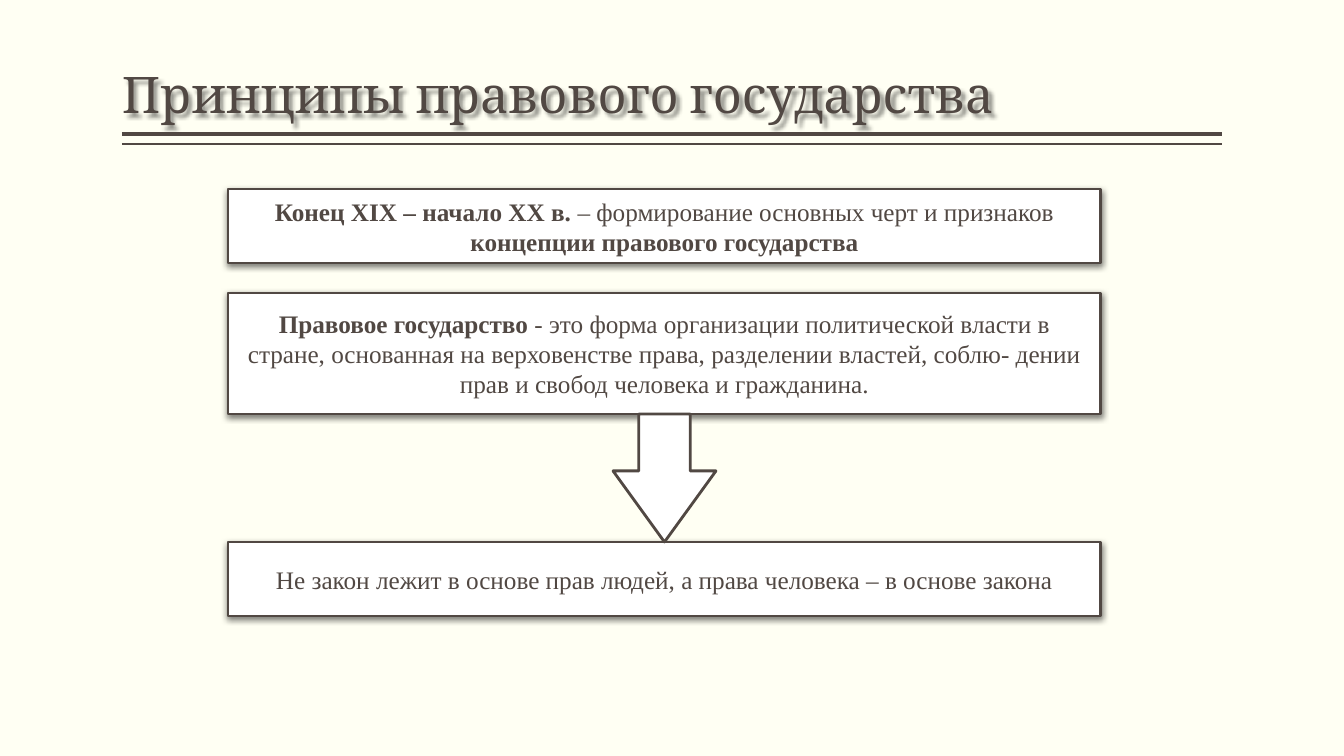
from lxml import etree
from pptx import Presentation
from pptx.dml.color import RGBColor
from pptx.enum.shapes import MSO_CONNECTOR, MSO_SHAPE
from pptx.enum.text import MSO_ANCHOR, MSO_AUTO_SIZE, PP_ALIGN
from pptx.oxml.ns import qn
from pptx.util import Pt

PX = 914400 / 100.8
BROWN = RGBColor(0x51, 0x48, 0x43)
WHITE = RGBColor(0xFF, 0xFF, 0xFF)
CREAM = RGBColor(0xFF, 0xFF, 0xF3)

PERIOD = [
    ("Конец XIX – начало XX в. ", True),
    ("– формирование основных черт и признаков ", False),
    ("концепции правового государства", True),
]
DEFINITION = [
    ("Правовое государство ", True),
    ("- это форма организации политической власти в стране, основанная на "
     "верховенстве права, разделении властей, соблю- дении прав и свобод "
     "человека и гражданина.", False),
]
CONCLUSION = [
    ("Не закон лежит в основе прав людей, а права человека – в основе закона", False),
]


def px(*lengths):
    return [round(n * PX) for n in lengths]


def set_shadow(sp, blur, dist, angle, alpha):
    sp.shadow.inherit = False
    effects = sp._element.spPr.find(qn("a:effectLst"))
    outer = etree.SubElement(effects, qn("a:outerShdw"), blurRad=str(Pt(blur)),
                             dist=str(Pt(dist)), dir=str(angle * 60000),
                             algn="ctr", rotWithShape="0")
    color = etree.SubElement(outer, qn("a:srgbClr"), val="000000")
    etree.SubElement(color, qn("a:alpha"), val=str(alpha * 1000))


def set_font(p, name, size):
    p.font.name = name
    p.font.size = Pt(size)
    p.font.color.rgb = BROWN


def add_title(s, text, x, y, w, h):
    sp = s.shapes.title
    sp.left, sp.top, sp.width, sp.height = px(x, y, w, h)
    set_shadow(sp, 3, 3, 45, 43)
    tf = sp.text_frame
    tf.text = text
    tf.word_wrap = True
    tf.auto_size = MSO_AUTO_SIZE.NONE
    tf.vertical_anchor = MSO_ANCHOR.BOTTOM
    tf.margin_left = tf.margin_right = 0
    p = tf.paragraphs[0]
    p.alignment = PP_ALIGN.LEFT
    p.line_spacing = 0.9
    set_font(p, "Cambria", 36)
    for gap, weight in ((5, 3), (15, 1)):
        rule = s.shapes.add_connector(
            MSO_CONNECTOR.STRAIGHT, *px(x, y + h + gap, x + w, y + h + gap))
        rule.line.color.rgb = BROWN
        rule.line.width = Pt(weight)
        etree.SubElement(rule._element.spPr, qn("a:effectLst"))


def add_outlined(s, kind, x, y, w, h):
    sp = s.shapes.add_shape(kind, *px(x, y, w, h))
    sp.shadow.inherit = False
    sp.fill.solid()
    sp.fill.fore_color.rgb = WHITE
    sp.line.color.rgb = BROWN
    sp.line.width = Pt(2)
    return sp


def add_statement(s, runs, x, y, w, h):
    sp = add_outlined(s, MSO_SHAPE.RECTANGLE, x, y, w, h)
    set_shadow(sp, 4.5, 1.5, 90, 50)
    tf = sp.text_frame
    tf.word_wrap = True
    tf.vertical_anchor = MSO_ANCHOR.MIDDLE
    p = tf.paragraphs[0]
    p.alignment = PP_ALIGN.CENTER
    set_font(p, "Times New Roman", 18)
    for text, bold in runs:
        r = p.add_run()
        r.text = text
        r.font.bold = bold


def add_scheme(s, x, y, w):
    short, tall, gap = 74, 121, 30
    arrow_w, arrow_h = 103, 128
    definition_y = y + short + gap
    arrow_y = definition_y + tall
    add_statement(s, PERIOD, x, y, w, short)
    add_statement(s, DEFINITION, x, definition_y, w, tall)
    add_statement(s, CONCLUSION, x, arrow_y + arrow_h, w, short)
    arrow = add_outlined(s, MSO_SHAPE.DOWN_ARROW,
                         x + (w - arrow_w) / 2, arrow_y, arrow_w, arrow_h)
    arrow.adjustments[0] = 0.5
    arrow.adjustments[1] = 0.69


def main():
    prs = Presentation()
    prs.slide_width, prs.slide_height = px(1344, 756)
    s = prs.slides.add_slide(prs.slide_layouts[5])
    s.background.fill.solid()
    s.background.fill.fore_color.rgb = CREAM
    add_title(s, "Принципы правового государства", 122, 8, 1100, 121)
    add_scheme(s, 228, 189, 873)
    prs.save("out.pptx")


if __name__ == "__main__":
    main()
